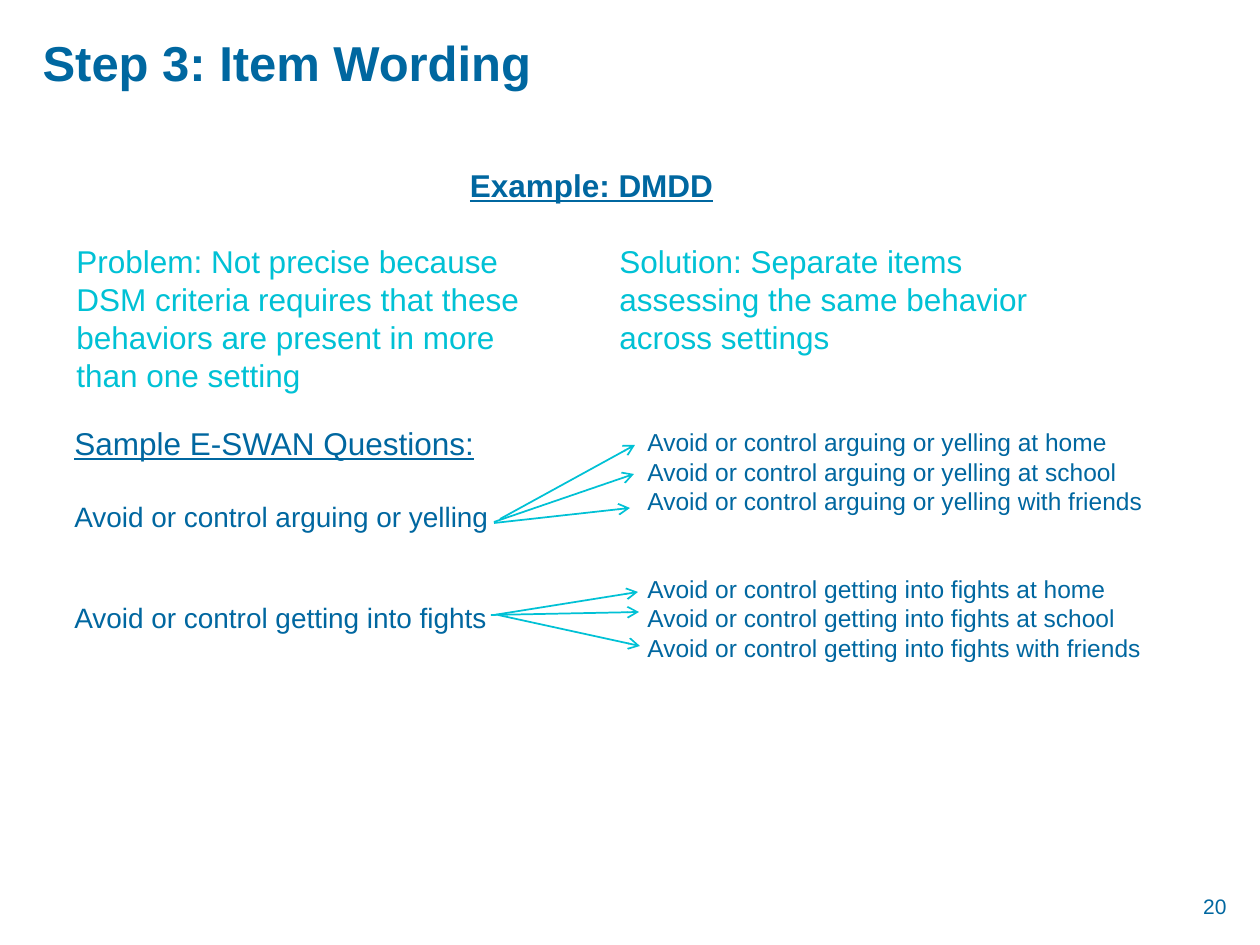
from pptx import Presentation
from pptx.dml.color import RGBColor
from pptx.enum.shapes import MSO_CONNECTOR
from pptx.enum.text import MSO_ANCHOR, PP_ALIGN
from pptx.oxml.ns import qn
from pptx.util import Emu, Pt
from lxml import etree

STRAIGHT = MSO_CONNECTOR.STRAIGHT
LEFT, CENTER, RIGHT = PP_ALIGN.LEFT, PP_ALIGN.CENTER, PP_ALIGN.RIGHT
TOP, MIDDLE, BOTTOM = MSO_ANCHOR.TOP, MSO_ANCHOR.MIDDLE, MSO_ANCHOR.BOTTOM

EMU_PER_PX = 914400 / 126
FONT = "Arial"
BLUE, CYAN = "0067A0", "00C1D5"
BEHAVIORS = ("arguing or yelling", "getting into fights")
SETTINGS = ("at home", "at school", "with friends")


def px(length):
    return Emu(round(length * EMU_PER_PX))


def color(hex_value):
    return RGBColor.from_string(hex_value)


def format_paragraph(paragraph, size, hex_value, bold=False, underline=False,
                     align=LEFT, space_before=0):
    paragraph.alignment = align
    paragraph.space_before = Pt(space_before)
    font = paragraph.font
    font.name, font.size = FONT, Pt(size)
    font.bold, font.underline = bold, underline
    font.color.rgb = color(hex_value)


def add_text(slide, box, lines, anchor=TOP):
    """Add a text box; each line is (text, size, colour, other formats)."""
    frame = slide.shapes.add_textbox(*map(px, box)).text_frame
    frame.word_wrap = True
    frame.vertical_anchor = anchor
    for index, (text, size, hex_value, formats) in enumerate(lines):
        paragraph = frame.add_paragraph() if index else frame.paragraphs[0]
        paragraph.text = text
        format_paragraph(paragraph, size, hex_value, **formats)


def add_arrow(slide, start, end):
    arrow = slide.shapes.add_connector(STRAIGHT, *map(px, (*start, *end)))
    arrow.line.color.rgb = color(CYAN)
    arrow.line.width = Pt(1)
    etree.SubElement(arrow.line._get_or_add_ln(), qn("a:tailEnd"), type="arrow")
    etree.SubElement(arrow._element.spPr, qn("a:effectLst"))


def add_title(slide, box, text):
    title = slide.shapes.title
    title.left, title.top, title.width, title.height = map(px, box)
    title.text_frame.text = text
    title.text_frame.vertical_anchor = MIDDLE
    paragraph = title.text_frame.paragraphs[0]
    format_paragraph(paragraph, 28, BLUE, bold=True)
    paragraph.line_spacing = 0.9


def add_problem_and_solution(slide, box):
    left, top, width, height = box
    column_width = 494
    add_text(slide, (left, top, column_width, height), [
        ("Problem: Not precise because DSM criteria requires that these "
         "behaviors are present in more than one setting", 18, CYAN, {})])
    add_text(slide, (left + width - column_width, top, column_width, height), [
        ("Solution: Separate items assessing the same behavior across settings",
         18, CYAN, {})])


def add_questions(slide, box):
    """Place the general questions left and their separate items right."""
    left, top, width, height = box
    general = [("Sample E-SWAN Questions:", 18, BLUE, {"underline": True})]
    for behavior, gap in zip(BEHAVIORS, (21.5, 38.5)):
        general.append((f"Avoid or control {behavior}", 16, BLUE,
                        {"space_before": gap}))
    add_text(slide, (left, top, 504, height), general)

    items = []
    for behavior in BEHAVIORS:
        for setting in SETTINGS:
            starts_group = items and setting == SETTINGS[0]
            items.append((f"Avoid or control {behavior} {setting}", 14, BLUE,
                          {"space_before": 33.5 if starts_group else 0}))
    items_width = 559
    add_text(slide, (left + width - items_width, top + 3, items_width, height), items)

    arrows = (
        ((438, 101), (573, 27)), ((432, 104), (572, 56)), ((432, 105), (568, 90)),
        ((432, 197), (576, 174)), ((429, 197), (577, 194)), ((436, 197), (578, 228)),
    )
    for start, end in arrows:
        add_arrow(slide, *((left + x, top + y) for x, y in (start, end)))


def main():
    presentation = Presentation()
    presentation.slide_width, presentation.slide_height = px(1260), px(945)
    slide = presentation.slides.add_slide(presentation.slide_layouts[5])
    add_title(slide, (30, 9, 1198, 113), "Step 3: Item Wording")
    add_text(slide, (417, 160, 349, 50), [
        ("Example: DMDD", 18, BLUE,
         {"bold": True, "underline": True, "align": CENTER})])
    add_problem_and_solution(slide, (64, 236, 1037, 165))
    add_questions(slide, (62, 418, 1132, 251))
    add_text(slide, (935, 887, 304, 38),
             [("20", 12, BLUE, {"align": RIGHT})], BOTTOM)
    presentation.save("out.pptx")


if __name__ == "__main__":
    main()
